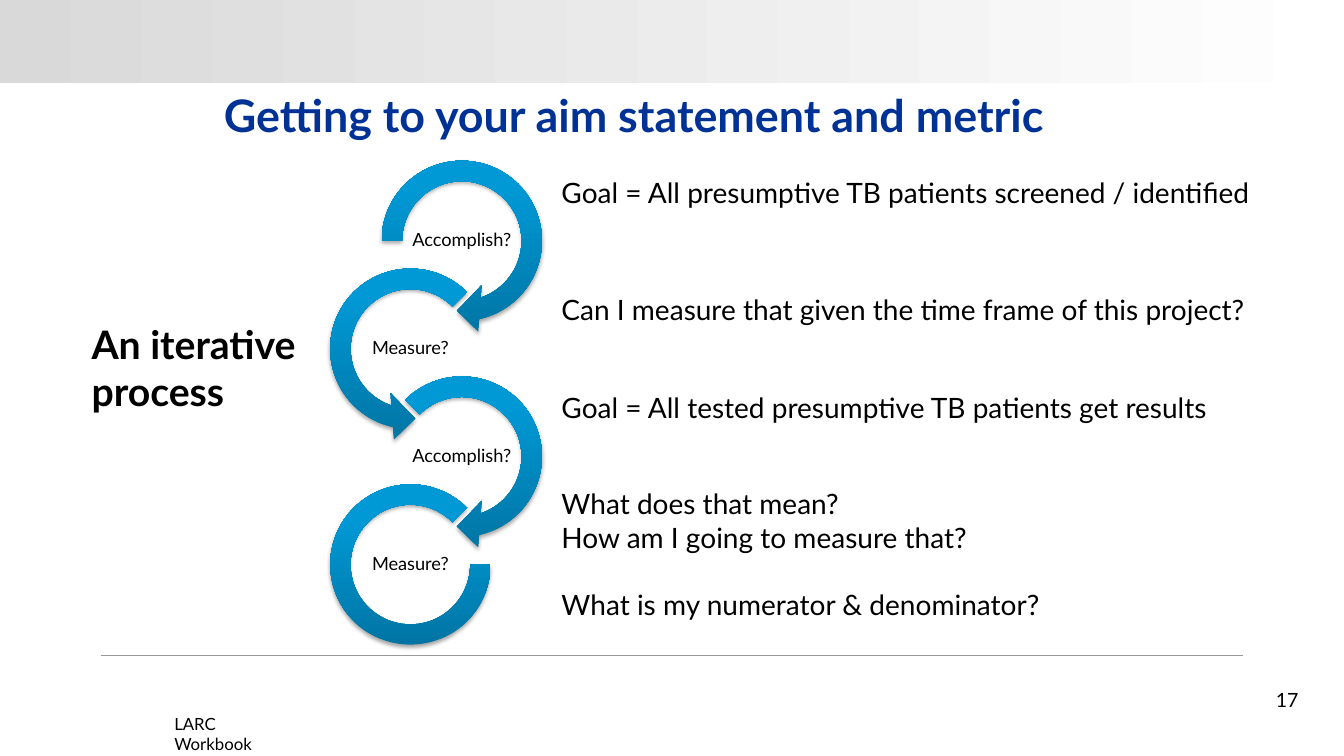
from dataclasses import dataclass

from lxml import etree
from pptx import Presentation
from pptx.dml.color import RGBColor
from pptx.enum.shapes import MSO_CONNECTOR, MSO_SHAPE
from pptx.enum.text import MSO_ANCHOR, MSO_AUTO_SIZE, PP_ALIGN
from pptx.oxml import parse_xml
from pptx.oxml.ns import nsdecls, qn
from pptx.util import Inches, Pt

RECTANGLE = MSO_SHAPE.RECTANGLE
ARROW_RIGHT = MSO_SHAPE.CIRCULAR_ARROW
ARROW_LEFT = MSO_SHAPE.LEFT_CIRCULAR_ARROW
BLOCK_ARC = MSO_SHAPE.BLOCK_ARC
STRAIGHT = MSO_CONNECTOR.STRAIGHT
TOP, MIDDLE = MSO_ANCHOR.TOP, MSO_ANCHOR.MIDDLE
LEFT, CENTER, RIGHT = PP_ALIGN.LEFT, PP_ALIGN.CENTER, PP_ALIGN.RIGHT
NO_FIT, GROW = MSO_AUTO_SIZE.NONE, MSO_AUTO_SIZE.SHAPE_TO_FIT_TEXT


@dataclass(frozen=True)
class Theme:
    font: str = "Lato"
    text: str = "000000"
    title: str = "003296"
    band_dark: str = "D9D9D9"
    band_light: str = "FFFFFF"
    ring_dark: str = "0075A4"
    ring_light: str = "0099D6"
    rule: str = "999999"
    title_size: int = 32
    heading_size: int = 28
    body_size: int = 20
    number_size: int = 14
    label_size: int = 13
    footer_size: int = 12


THEME = Theme()

TITLE = "Getting to your aim statement and metric"
HEADING = "An iterative process"
FOOTER = "LARC Workbook"
PAGE_NUMBER = "17"

# label, shape, centre x, diameter, adjustments
RINGS = [
    ("Accomplish?", ARROW_RIGHT, 4.58, 1.85, (0.11, 11.42, 45, 108, 0.125)),
    ("Measure?", ARROW_LEFT, 4.07, 1.85, (0.11, 11.42, 63, 189, 0.125)),
    ("Accomplish?", ARROW_RIGHT, 4.58, 1.85, (0.11, 11.42, 45, 135, 0.125)),
    ("Measure?", BLOCK_ARC, 4.07, 1.59, (0, 189, 0.127)),
]
FIRST_RING_Y, RING_STEP = 2.39, 1.07
LABEL_WIDTH, LABEL_HEIGHT = 1.03, 0.52

# top, width, height, lines
NOTES_LEFT = 5.47
NOTES = [
    (1.69, 7.25, 0.44, ["Goal = All presumptive TB patients screened / identified"]),
    (2.85, 7.25, 0.44, ["Can I measure that given the time frame of this project?"]),
    (3.82, 6.91, 0.44, ["Goal = All tested presumptive TB patients get results"]),
    (4.78, 4.32, 0.77, ["What does that mean?", "How am I going to measure that?"]),
    (5.78, 5.05, 0.44, ["What is my numerator & denominator?"]),
]


def rgb(value):
    return RGBColor.from_string(value)


def write(box, lines, size, color=THEME.text, bold=False, align=LEFT, anchor=TOP,
          margins=(0.1, 0.05), spacing=None, fit=GROW):
    frame = box.text_frame
    frame.text = "\n".join(lines)
    frame.word_wrap = True
    frame.auto_size = fit
    frame.vertical_anchor = anchor
    frame.margin_left = frame.margin_right = Inches(margins[0])
    frame.margin_top = frame.margin_bottom = Inches(margins[1])
    for para in frame.paragraphs:
        para.alignment = align
        if spacing:
            para.line_spacing = spacing
        para.font.name = THEME.font
        para.font.size = Pt(size)
        para.font.bold = bold
        para.font.color.rgb = rgb(color)


def add_text(page, left, top, width, height, lines, size, **style):
    box = page.shapes.add_textbox(
        Inches(left), Inches(top), Inches(width), Inches(height))
    write(box, lines, size, **style)


def add_gradient_shape(page, kind, left, top, width, height, stops, angle):
    """Stops are (position, colour) pairs; angle runs counter-clockwise."""
    shape = page.shapes.add_shape(
        kind, Inches(left), Inches(top), Inches(width), Inches(height))
    shape.shadow.inherit = False
    shape.line.fill.background()
    shape.fill.gradient()
    shape.fill.gradient_angle = angle
    for stop, (position, color) in zip(shape.fill.gradient_stops, stops):
        stop.position = position
        stop.color.rgb = rgb(color)
    return shape


def add_soft_shadow(shape):
    effects = shape._element.spPr.find(qn("a:effectLst"))
    effects.append(parse_xml(
        f'<a:outerShdw {nsdecls("a")} blurRad="{Pt(3.1)}" dist="{Pt(1.8)}" '
        'dir="5400000" rotWithShape="0"><a:srgbClr val="000000">'
        '<a:alpha val="35000"/></a:srgbClr></a:outerShdw>'))


def add_ring(page, index, label, kind, center_x, diameter, adjustments):
    center_y = FIRST_RING_Y + index * RING_STEP
    ring = add_gradient_shape(
        page, kind, center_x - diameter / 2, center_y - diameter / 2,
        diameter, diameter, [(0, THEME.ring_dark), (0.8, THEME.ring_light)], 90)
    for position, value in enumerate(adjustments):
        ring.adjustments[position] = value
    add_soft_shadow(ring)
    add_text(page, center_x - LABEL_WIDTH / 2, center_y - LABEL_HEIGHT / 2,
             LABEL_WIDTH, LABEL_HEIGHT, [label], THEME.label_size, align=CENTER,
             anchor=MIDDLE, margins=(0.01, 0.01), spacing=0.9, fit=NO_FIT)


def add_rule(page):
    rule = page.shapes.add_connector(
        STRAIGHT, Inches(1), Inches(6.5), Inches(12.33), Inches(6.5))
    rule.line.color.rgb = rgb(THEME.rule)
    rule.line.width = Pt(1)
    etree.SubElement(rule._element.spPr, qn("a:effectLst"))


def main():
    deck = Presentation()
    deck.slide_width, deck.slide_height = Inches(13.33), Inches(7.5)
    page = deck.slides.add_slide(deck.slide_layouts[5])

    add_gradient_shape(page, RECTANGLE, 0, 0, 13.33, 0.82,
                       [(0, THEME.band_dark), (1, THEME.band_light)], 0)
    add_rule(page)

    title = page.shapes.title
    title.left, title.top = Inches(2.22), Inches(0.9)
    title.width, title.height = Inches(8.88), Inches(0.62)
    write(title, [TITLE], THEME.title_size, color=THEME.title, bold=True,
          margins=(0, 0.05), spacing=0.85, fit=NO_FIT)

    for index, ring in enumerate(RINGS):
        add_ring(page, index, *ring)

    add_text(page, 0.81, 3.13, 2.54, 1.04, [HEADING], THEME.heading_size, bold=True)
    for top, width, height, lines in NOTES:
        add_text(page, NOTES_LEFT, top, width, height, lines, THEME.body_size)

    add_text(page, 9.88, 6.76, 3, 0.4, [PAGE_NUMBER], THEME.number_size, align=RIGHT,
             anchor=MIDDLE, margins=(0, 0.05), spacing=0.9, fit=NO_FIT)
    add_text(page, 1.63, 7.03, 1.39, 0.3, [FOOTER], THEME.footer_size)

    deck.save("out.pptx")


if __name__ == "__main__":
    main()
